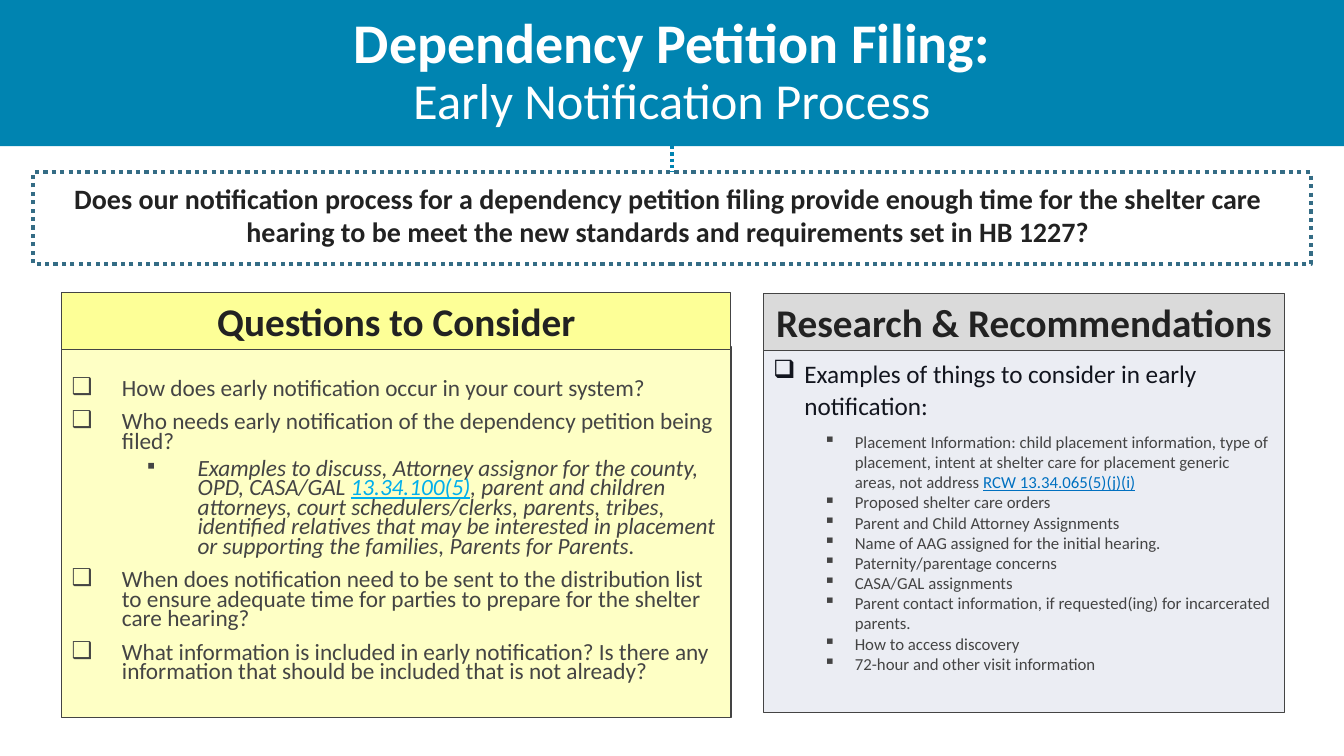
import pptx
import pptx.util
import pptx.dml.color
import pptx.enum.dml
import pptx.enum.shapes
import pptx.enum.text
import pptx.oxml
import pptx.oxml.ns

Inch = pptx.util.Inches
Pt = pptx.util.Pt
Align = pptx.enum.text.PP_ALIGN
Mid = pptx.enum.text.MSO_ANCHOR.MIDDLE
Top = pptx.enum.text.MSO_ANCHOR.TOP
Dots = pptx.enum.dml.MSO_LINE.ROUND_DOT
Rect = pptx.enum.shapes.MSO_SHAPE.RECTANGLE
GRAY, DARK, WHITE = "444444", "222222", "FFFFFF"


def hue(code):
    return pptx.dml.color.RGBColor.from_string(code)


def write(frame, text, size, color, bold=False, italic=False, link=None,
          align=Align.LEFT, mark=None, left=0, hang=0, level=0,
          line=1.0, before=0, after=0):
    """Add a paragraph; text between | signs takes the link colour and an underline."""
    par = frame.paragraphs[0]
    if par.runs:
        par = frame.add_paragraph()
    par.alignment, par.level, par.line_spacing = align, level, line
    par.space_before, par.space_after = Pt(before), Pt(after)
    for i, part in enumerate(text.split("|")):
        run = par.add_run()
        run.text = part
        font = run.font
        font.name, font.size, font.bold, font.italic = "Calibri", Pt(size), bold, italic
        font.underline = i % 2 == 1
        font.color.rgb = hue(link if i % 2 else color)
    if mark:
        props = par._p.get_or_add_pPr()
        props.set("marL", str(Inch(left)))
        props.set("indent", str(-Inch(hang)))
        dot = pptx.oxml.parse_xml(
            f'<a:buChar {pptx.oxml.ns.nsdecls("a")} char="{mark}"/>')
        props.append(dot)


deck = pptx.Presentation()
deck.slide_width, deck.slide_height = Inch(13.33), Inch(7.5)
slide = deck.slides.add_slide(deck.slide_layouts[1])
shapes = slide.shapes
title, asks = shapes.title, slide.placeholders[1]

# Question frame and the two panels with their headings
frame, head, tips, tag = [shapes.add_shape(Rect, 0, 0, 0, 0) for _ in range(4)]
parts = [
    (title, (0, 0, 13.33, 1.45), "0084B1", None, 0, Mid),
    (asks, (0.61, 3.44, 6.64, 3.68), "FEFFC5", GRAY, 1, Mid),
    (frame, (0.33, 1.71, 12.67, 0.91), None, "346C85", 3, Mid),
    (head, (0.61, 2.9, 6.64, 0.57), "FDFF97", GRAY, 0.75, Top),
    (tips, (7.57, 3.48, 5.17, 3.59), "EBEDF3", GRAY, 1, Top),
    (tag, (7.57, 2.91, 5.17, 0.57), "DADADA", GRAY, 0.75, Top),
]
for shape, place, fill, edge, width, anchor in parts:
    shape.left, shape.top, shape.width, shape.height = map(Inch, place)
    shape.shadow.inherit = False
    if fill:
        shape.fill.solid()
        shape.fill.fore_color.rgb = hue(fill)
    else:
        shape.fill.background()
    if edge:
        shape.line.color.rgb = hue(edge)
        shape.line.width = Pt(width)
    body = shape.text_frame
    body.word_wrap = shape is not tag
    body.auto_size = pptx.enum.text.MSO_AUTO_SIZE.NONE
    body.vertical_anchor = anchor
frame.line.dash_style = Dots

# Title and the question below it
write(title.text_frame, "Dependency Petition Filing:", 40, WHITE, bold=True,
      align=Align.CENTER, line=0.9)
write(title.text_frame, "Early Notification Process", 36, WHITE,
      align=Align.CENTER, line=0.9)
query = shapes.add_textbox(Inch(0.29), Inch(1.75), Inch(12.67), Inch(0.77))
query.text_frame.word_wrap = True
write(query.text_frame, "Does our notification process for a dependency petition filing "
      "provide enough time for the shelter care hearing to be meet the new standards "
      "and requirements set in HB 1227?", 20, DARK, bold=True, align=Align.CENTER)

link = shapes.add_connector(pptx.enum.shapes.MSO_CONNECTOR.STRAIGHT, 0, 0, 0, 0)
link.begin_connect(title, 2)
link.end_connect(frame, 0)
link.line.color.rgb = hue("0083B1")
link.line.width = Pt(2.25)
link.line.dash_style = Dots
link._element.spPr.append(
    pptx.oxml.parse_xml(f'<a:effectLst {pptx.oxml.ns.nsdecls("a")}/>'))

for box, text in [(head, "Questions to Consider"), (tag, "Research & Recommendations")]:
    write(box.text_frame, text, 28, DARK, bold=True, align=Align.CENTER)

# Left panel
for level, text in [
    (0, "How does early notification occur in your court system?"),
    (0, "Who needs early notification of the dependency petition being filed?"),
    (1, "Examples to discuss, Attorney assignor for the county, OPD, CASA/GAL "
        "|13.34.100(5)|, parent and children attorneys, court schedulers/clerks, "
        "parents, tribes, identified relatives that may be interested in placement "
        "or supporting the families, Parents for Parents."),
    (0, "When does notification need to be sent to the distribution list to ensure "
        "adequate time for parties to prepare for the shelter care hearing?"),
    (0, "What information is included in early notification? Is there any "
        "information that should be included that is not already?"),
]:
    write(asks.text_frame, text, 16.6, GRAY, italic=level == 1, link="00AFEC",
          mark="❑▪"[level], left=0.5 + 0.75 * level, hang=0.5, level=level,
          line=0.7, before=10 - 5 * level)

# Right panel
write(tips.text_frame, "Examples of things to consider in early notification:", 18,
      "12151E", mark="❑", left=0.31, hang=0.31, line=1.07, after=8)
for text in [
    "Placement Information: child placement information, type of placement, intent at "
    "shelter care for placement generic areas, not address |RCW 13.34.065(5)(j)(i)|",
    "Proposed shelter care orders",
    "Parent and Child Attorney Assignments",
    "Name of AAG assigned for the initial hearing.",
    "Paternity/parentage concerns",
    "CASA/GAL assignments",
    "Parent contact information, if requested(ing) for incarcerated parents.",
    "How to access discovery",
    "72-hour and other visit information",
]:
    write(tips.text_frame, text, 12, GRAY, link="0070C0", mark="▪",
          left=0.81, hang=0.31, level=1)

deck.save("out.pptx")
